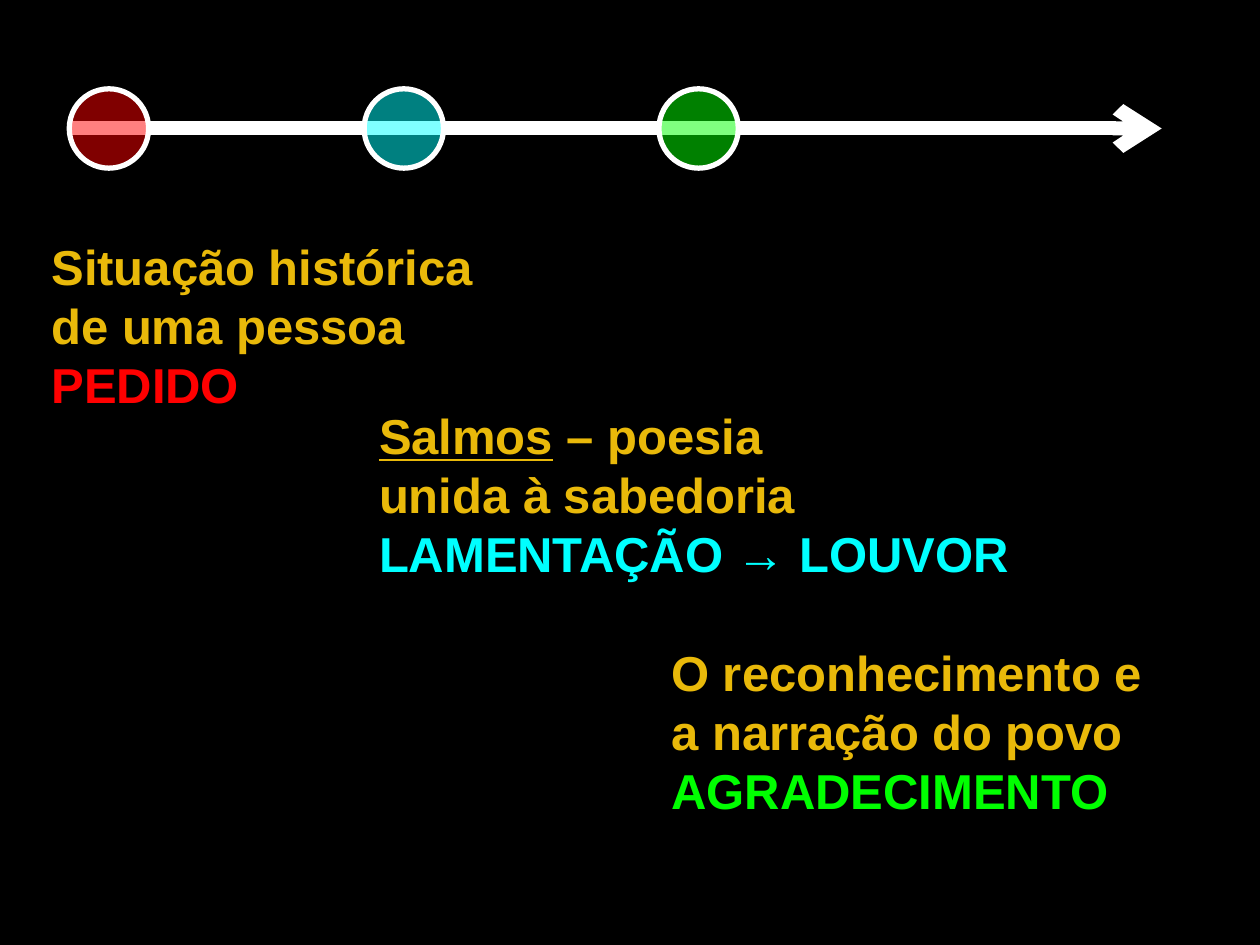
from dataclasses import dataclass

import lxml.etree
import pptx
import pptx.dml.color
import pptx.enum.shapes
import pptx.enum.text
import pptx.oxml.ns
import pptx.util
from pptx.util import Inches

COLORS = {
    "background": "000000",
    "line": "FFFFFF",
    "gold": "E9B90A",
    "red": "FF0000",
    "cyan": "00FFFF",
    "green": "00FF00",
}
FONT = "Arial"
AXIS_Y = 1.02
AXIS_START, AXIS_END = 0.55, 9.22
STAGE_STEP = 2.34
DOT = 0.63


@dataclass
class Stage:
    color: str
    left: float
    top: float
    width: float
    lines: list[str]
    keyword: str
    underlined: str = ""


STAGES = [
    Stage("red", 0.31, 1.83, 3.59,
          ["Situação histórica", "de uma pessoa"], "PEDIDO"),
    Stage("cyan", 2.91, 3.17, 5.25,
          [" – poesia", "unida à sabedoria"], "LAMENTAÇÃO → LOUVOR",
          underlined="Salmos"),
    Stage("green", 5.23, 5.05, 4.05,
          ["O reconhecimento e", "a narração do povo"], "AGRADECIMENTO"),
]


def rgb(name: str) -> pptx.dml.color.RGBColor:
    return pptx.dml.color.RGBColor.from_string(COLORS[name])


def add_child(parent, tag: str, **attrs: str) -> None:
    lxml.etree.SubElement(parent, pptx.oxml.ns.qn(tag), attrs)


def add_axis(s) -> None:
    axis = s.shapes.add_connector(
        pptx.enum.shapes.MSO_CONNECTOR.STRAIGHT,
        Inches(AXIS_START), Inches(AXIS_Y), Inches(AXIS_END), Inches(AXIS_Y))
    axis.line.color.rgb = rgb("line")
    axis.line.width = pptx.util.Pt(8)
    spPr = axis._element.spPr
    add_child(spPr.find(pptx.oxml.ns.qn("a:ln")), "a:tailEnd", type="arrow")
    add_child(spPr, "a:effectLst")


def add_dot(s, index: int, color: str) -> None:
    sp = s.shapes.add_shape(
        pptx.enum.shapes.MSO_SHAPE.OVAL,
        Inches(AXIS_START + index * STAGE_STEP), Inches(AXIS_Y - DOT / 2),
        Inches(DOT), Inches(DOT))
    sp.shadow.inherit = False
    sp.fill.solid()
    sp.fill.fore_color.rgb = rgb(color)
    # Half transparent, so the axis shows through
    srgb = sp._element.spPr.find(
        f"{pptx.oxml.ns.qn('a:solidFill')}/{pptx.oxml.ns.qn('a:srgbClr')}")
    add_child(srgb, "a:alpha", val="50000")
    sp.line.color.rgb = rgb("line")
    sp.line.width = pptx.util.Pt(3)


def add_caption(s, stage: Stage) -> None:
    sp = s.shapes.add_textbox(Inches(stage.left), Inches(stage.top),
                              Inches(stage.width), Inches(1.51))
    tf = sp.text_frame
    tf.word_wrap = False
    tf.auto_size = pptx.enum.text.MSO_AUTO_SIZE.SHAPE_TO_FIT_TEXT
    for i, text in enumerate([*stage.lines, stage.keyword]):
        p = tf.paragraphs[0] if i == 0 else tf.add_paragraph()
        if i == 0 and stage.underlined:
            r = p.add_run()
            r.text = stage.underlined
            r.font.underline = True
        p.add_run().text = text
        p.font.name = FONT
        p.font.size = pptx.util.Pt(28)
        p.font.bold = True
        p.font.color.rgb = rgb(stage.color if text == stage.keyword else "gold")


def main() -> None:
    prs = pptx.Presentation()
    prs.slide_width, prs.slide_height = Inches(10), Inches(7.5)
    s = prs.slides.add_slide(prs.slide_layouts[6])
    s.background.fill.solid()
    s.background.fill.fore_color.rgb = rgb("background")

    # Timeline with one dot and one caption per stage
    add_axis(s)
    for i, stage in enumerate(STAGES):
        add_dot(s, i, stage.color)
        add_caption(s, stage)

    prs.save("out.pptx")


if __name__ == "__main__":
    main()
